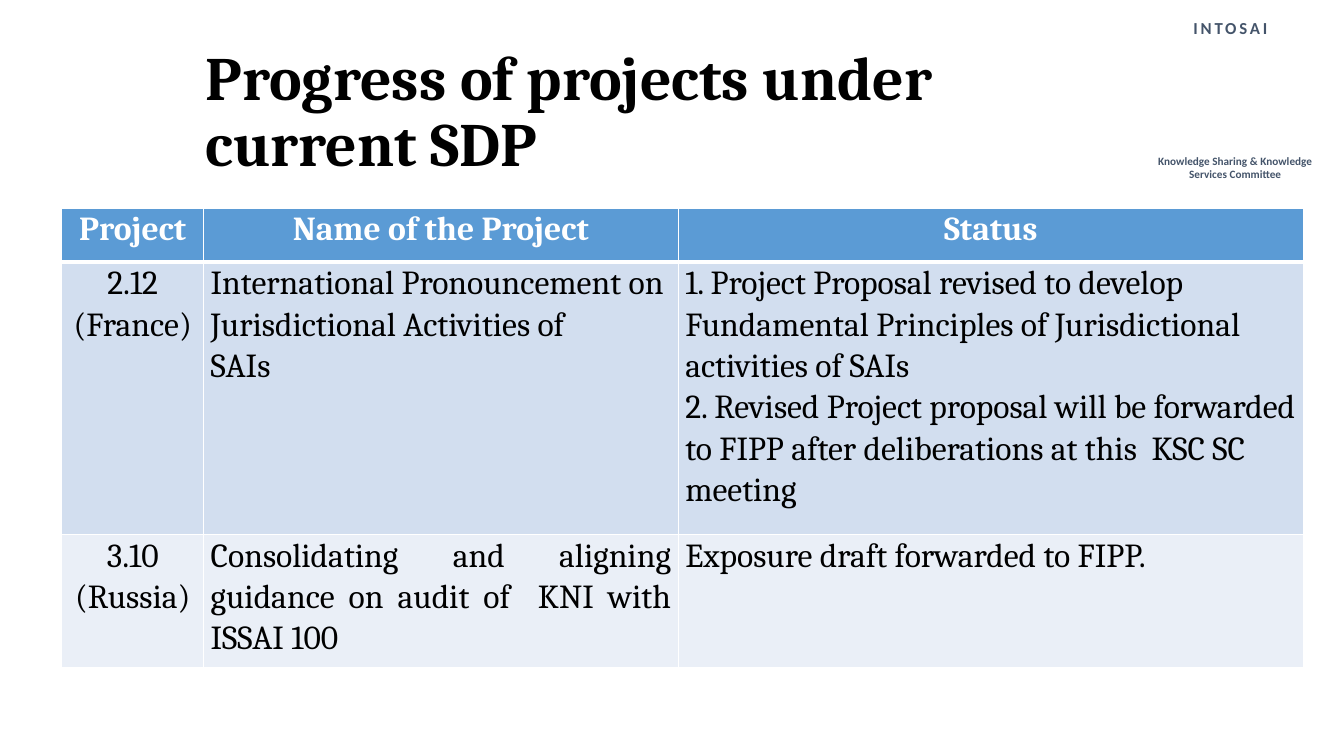
from lxml import etree
from pptx import Presentation
from pptx.dml.color import RGBColor
from pptx.enum import text
from pptx.oxml import ns
from pptx.util import Cm, Pt

BLACK = RGBColor(0x00, 0x00, 0x00)
WHITE = RGBColor(0xFF, 0xFF, 0xFF)
SLATE = RGBColor(0x44, 0x54, 0x6A)
HEADER_BLUE = RGBColor(0x5B, 0x9B, 0xD5)
BAND_BLUE = RGBColor(0xD2, 0xDE, 0xEF)
BAND_PALE = RGBColor(0xEA, 0xEF, 0xF7)

LEFT = text.PP_ALIGN.LEFT
CENTER = text.PP_ALIGN.CENTER
JUSTIFY = text.PP_ALIGN.JUSTIFY

COLUMN_WIDTHS = (Cm(3.57), Cm(11.96), Cm(15.76))
ROW_HEIGHTS = (Cm(1.36), Cm(6.86), Cm(3.36))
ROW_FILLS = (HEADER_BLUE, BAND_BLUE, BAND_PALE)

# Each cell is a list of (paragraph text, alignment).
PROJECT_ROWS = (
    (
        [("Project", CENTER)],
        [("Name of the Project", CENTER)],
        [("Status", CENTER)],
    ),
    (
        [("2.12", CENTER), ("(France)", CENTER)],
        [("International Pronouncement on Jurisdictional Activities of", LEFT),
         ("SAIs", JUSTIFY)],
        [("1. Project Proposal revised to develop Fundamental Principles of "
          "Jurisdictional activities of SAIs", LEFT),
         ("2. Revised Project proposal will be forwarded to FIPP after "
          "deliberations at this  KSC SC meeting", LEFT)],
    ),
    (
        [("3.10", CENTER), ("(Russia)", CENTER)],
        [("Consolidating and aligning guidance on audit of  KNI with ISSAI 100",
          JUSTIFY)],
        [("Exposure draft forwarded to FIPP.", JUSTIFY)],
    ),
)


def format_paragraph(paragraph, font_name, size, color, bold, alignment, line_spacing):
    paragraph.alignment = alignment
    paragraph.line_spacing = line_spacing
    for run in paragraph.runs:
        run.font.name = font_name
        run.font.size = Pt(size)
        run.font.bold = bold
        run.font.color.rgb = color


def place_title(slide, words):
    title = slide.shapes.title
    title.left, title.top = Cm(4.93), Cm(1.02)
    title.width, title.height = Cm(23.01), Cm(3.68)
    frame = title.text_frame
    frame.text = words
    frame.word_wrap = True
    frame.auto_size = text.MSO_AUTO_SIZE.NONE
    frame.vertical_anchor = text.MSO_ANCHOR.MIDDLE
    format_paragraph(frame.paragraphs[0], "Cambria", 44, BLACK, True, LEFT, 0.9)


def add_label(slide, words, left, top, width, height, size):
    box = slide.shapes.add_textbox(left, top, width, height)
    frame = box.text_frame
    frame.word_wrap = True
    frame.text = words
    format_paragraph(frame.paragraphs[0], "Calibri", size, SLATE, True, CENTER, 1.0)
    return box


def set_letter_spacing(box, points):
    for run in box.text_frame.paragraphs[0].runs:
        run.font._element.set("spc", str(points * 100))


def set_cell_borders(cell, bottom_width, top_width):
    """Draw white lines on all four sides, with widths in points."""
    properties = cell._tc.get_or_add_tcPr()
    sides = (("lnL", 1), ("lnR", 1), ("lnT", top_width), ("lnB", bottom_width))
    for position, (side, width) in enumerate(sides):
        line = etree.Element(ns.qn(f"a:{side}"), w=str(Pt(width)))
        fill = etree.SubElement(line, ns.qn("a:solidFill"))
        etree.SubElement(fill, ns.qn("a:srgbClr"), val=str(WHITE))
        properties.insert(position, line)


def fill_cell(cell, paragraphs, fill_color, is_header):
    cell.margin_left = cell.margin_right = Cm(0.18)
    cell.margin_top = cell.margin_bottom = 0
    cell.fill.solid()
    cell.fill.fore_color.rgb = fill_color
    cell.text_frame.text = "\n".join(words for words, _ in paragraphs)
    color = WHITE if is_header else BLACK
    for paragraph, (_, alignment) in zip(cell.text_frame.paragraphs, paragraphs):
        format_paragraph(paragraph, "Cambria", 24, color, is_header, alignment, 1.07)


def add_project_table(slide):
    frame = slide.shapes.add_table(
        len(ROW_HEIGHTS), len(COLUMN_WIDTHS), Cm(1.56), Cm(5.24),
        sum(COLUMN_WIDTHS), sum(ROW_HEIGHTS))
    table = frame.table
    for column, width in zip(table.columns, COLUMN_WIDTHS):
        column.width = width
    for row, height in zip(table.rows, ROW_HEIGHTS):
        row.height = height
    for row_index, cells in enumerate(PROJECT_ROWS):
        for column_index, paragraphs in enumerate(cells):
            cell = table.cell(row_index, column_index)
            fill_cell(cell, paragraphs, ROW_FILLS[row_index], row_index == 0)
            set_cell_borders(cell, bottom_width=3 if row_index == 0 else 1,
                             top_width=3 if row_index == 1 else 1)


def main():
    presentation = Presentation()
    presentation.slide_width, presentation.slide_height = Cm(33.87), Cm(19.05)
    slide = presentation.slides.add_slide(presentation.slide_layouts[5])
    organisation = add_label(slide, "INTOSAI", Cm(28.98), Cm(0.33), Cm(4.06), Cm(0.76), 12)
    set_letter_spacing(organisation, 2)
    add_label(slide, "Knowledge Sharing & Knowledge Services Committee",
              Cm(28.5), Cm(3.76), Cm(5.26), Cm(0.94), 8)
    place_title(slide, "Progress of projects under current SDP")
    add_project_table(slide)
    presentation.save("out.pptx")


if __name__ == "__main__":
    main()
